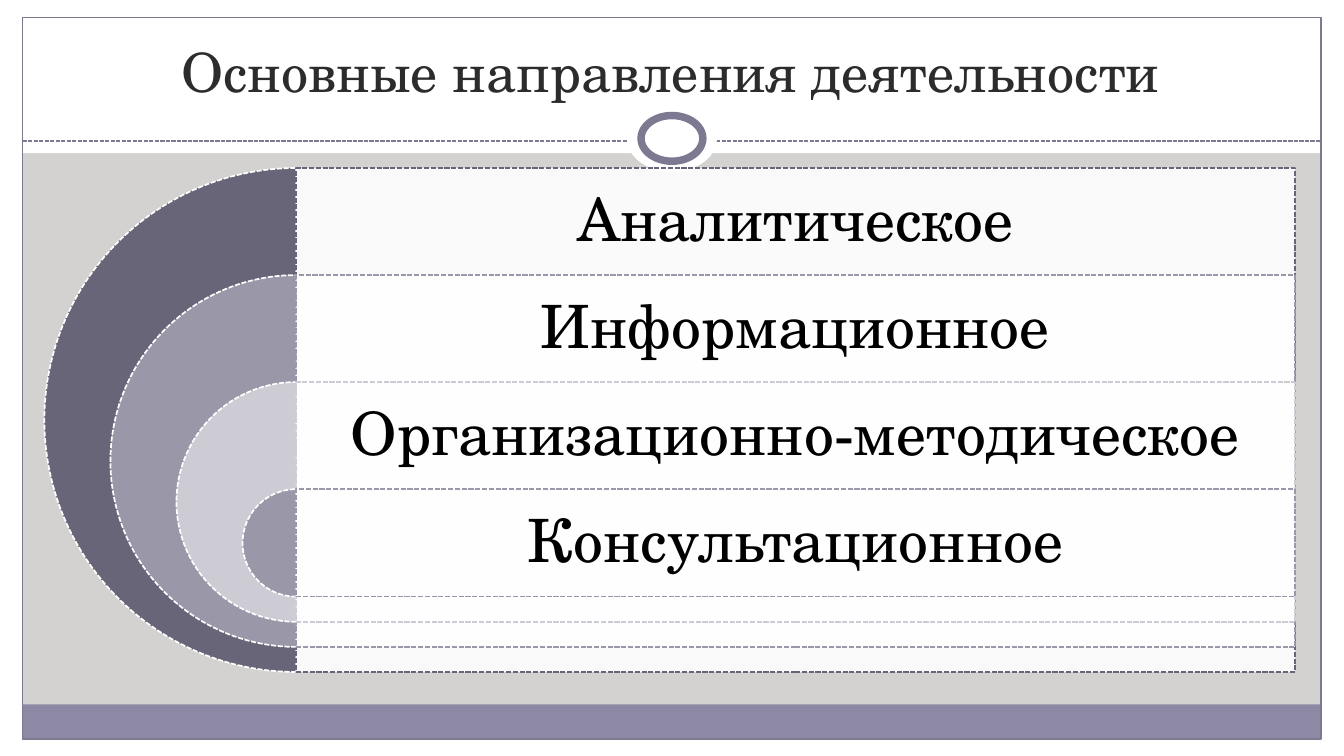
from lxml import etree
from pptx import Presentation
from pptx.dml.color import RGBColor
from pptx.enum.dml import MSO_LINE
from pptx.enum.shapes import MSO_CONNECTOR, MSO_SHAPE
from pptx.enum.text import MSO_ANCHOR, PP_ALIGN
from pptx.oxml.ns import qn
from pptx.util import Inches, Pt

RECT, OVAL, PIE = MSO_SHAPE.RECTANGLE, MSO_SHAPE.OVAL, MSO_SHAPE.PIE
DASH = MSO_LINE.SQUARE_DOT
MID, LOW = MSO_ANCHOR.MIDDLE, MSO_ANCHOR.BOTTOM

# Content
TITLE = "Основные направления деятельности"
ROWS = [
    ("Аналитическое", "dark"),
    ("Информационное", "mid"),
    ("Организационно-методическое", "pale"),
    ("Консультационное", "mid"),
]

# Theme
THEME = {
    "font": "TeX Gyre Schola",
    "title": 29, "row": 32,
    "back": "D4D2D0", "white": "FFFFFF", "bar": "8D89A4", "edge": "7C7991",
    "ink": "2C2C2C", "black": "000000",
    "dark": "686579", "mid": "9A97A9", "pale": "CDCCD5",
}

# Grid, in inches; the slide is 16:9
W = 10
H = W * 9 / 16
SIDE, HEAD, FOOT = 0.17, 1.14, 0.12
RULE = 1.05
LEFT, TOP, SIZE = 0.33, 1.25, 3.75
AXIS, WIDE = LEFT + SIZE / 2, 7.43
ROW, LAST = 0.8, 3.64
STEP = (LAST - TOP) / (len(ROWS) - 1)
SHRINK = (SIZE - ROW) / (len(ROWS) - 1)

prs = Presentation()
prs.slide_width, prs.slide_height = Inches(W), Inches(H)
slide = prs.slides.add_slide(prs.slide_layouts[5])
shapes = slide.shapes


def color(name):
    return RGBColor.from_string(THEME[name])


def stroke(line, name, width, dash=None):
    line.color.rgb = color(name)
    line.width = Pt(width)
    if dash:
        line.dash_style = dash


def draw(kind, box, fill=None, edge=None, alpha=None):
    shape = shapes.add_shape(kind, *map(Inches, box))
    shape.shadow.inherit = False
    if fill:
        shape.fill.solid()
        shape.fill.fore_color.rgb = color(fill)
    else:
        shape.fill.background()
    if alpha:
        tone = shape.element.spPr.find(qn("a:solidFill"))[0]
        etree.SubElement(tone, qn("a:alpha"), val=str(alpha * 1000))
    if edge:
        stroke(shape.line, *edge)
    else:
        shape.line.fill.background()
    return shape


def write(shape, text, size, ink, frame, para):
    tf = shape.text_frame
    tf.text = text
    for key, val in frame.items():
        setattr(tf, key, val)
    p = tf.paragraphs[0]
    for key, val in para.items():
        setattr(p, key, val)
    font = p.runs[0].font
    font.name, font.size = THEME["font"], Pt(THEME[size])
    font.color.rgb = color(ink)


def frame(anchor, x, y):
    return {"word_wrap": True, "vertical_anchor": anchor,
            "margin_left": Inches(x), "margin_right": Inches(x),
            "margin_top": Inches(y), "margin_bottom": Inches(y)}


# Background and white margins
slide.background.fill.solid()
slide.background.fill.fore_color.rgb = color("back")
for box in [(0, H - FOOT, W, FOOT), (0, 0, W, HEAD),
            (0, 0, SIDE, H), (W - SIDE, 0, SIDE, H)]:
    draw(RECT, box, "white")

# Bottom bar, border and dashed rule
inner = W - 2 * SIDE
draw(RECT, (SIDE, 5.24, inner, 0.25), "bar")
draw(RECT, (SIDE, 0.13, inner, 5.37), edge=("edge", 0.75))
rule = shapes.add_connector(MSO_CONNECTOR.STRAIGHT, Inches(SIDE),
                            Inches(RULE), Inches(W - SIDE), Inches(RULE))
stroke(rule.line, "edge", 0.75, DASH)
etree.SubElement(rule.element.spPr, qn("a:effectLst"))

# Ring on the rule
for w, h, edge in [(0.67, 0.5, None), (0.46, 0.34, ("edge", 4))]:
    draw(OVAL, ((W - w) / 2, 1.03 - h / 2, w, h), "white", edge)

# Title, raised above the white margin
title = shapes.title
title.left, title.top, title.width, title.height = map(
    Inches, (LEFT, 0.19, 9.33, 0.62))
write(title, TITLE, "title", "ink", frame(LOW, 0.09, 0.04),
      {"alignment": PP_ALIGN.CENTER})
title.element.getparent().append(title.element)

# Nested half discs, panels and labels
for i, (text, tone) in enumerate(ROWS):
    size, top = SIZE - i * SHRINK, TOP + i * STEP
    pie = draw(PIE, (AXIS - size / 2, top, size, size), tone,
               ("white", 0.9, DASH))
    pie.adjustments[0], pie.adjustments[1] = 54, 162
    draw(RECT, (AXIS, top, WIDE, size), "white", (tone, 0.9, DASH), 90)
    label = shapes.add_textbox(*map(Inches, (AXIS, top, WIDE, ROW)))
    write(label, text, "row", "black", frame(MID, 0.13, 0.13),
          {"alignment": PP_ALIGN.CENTER, "line_spacing": 0.9})

prs.save("out.pptx")
